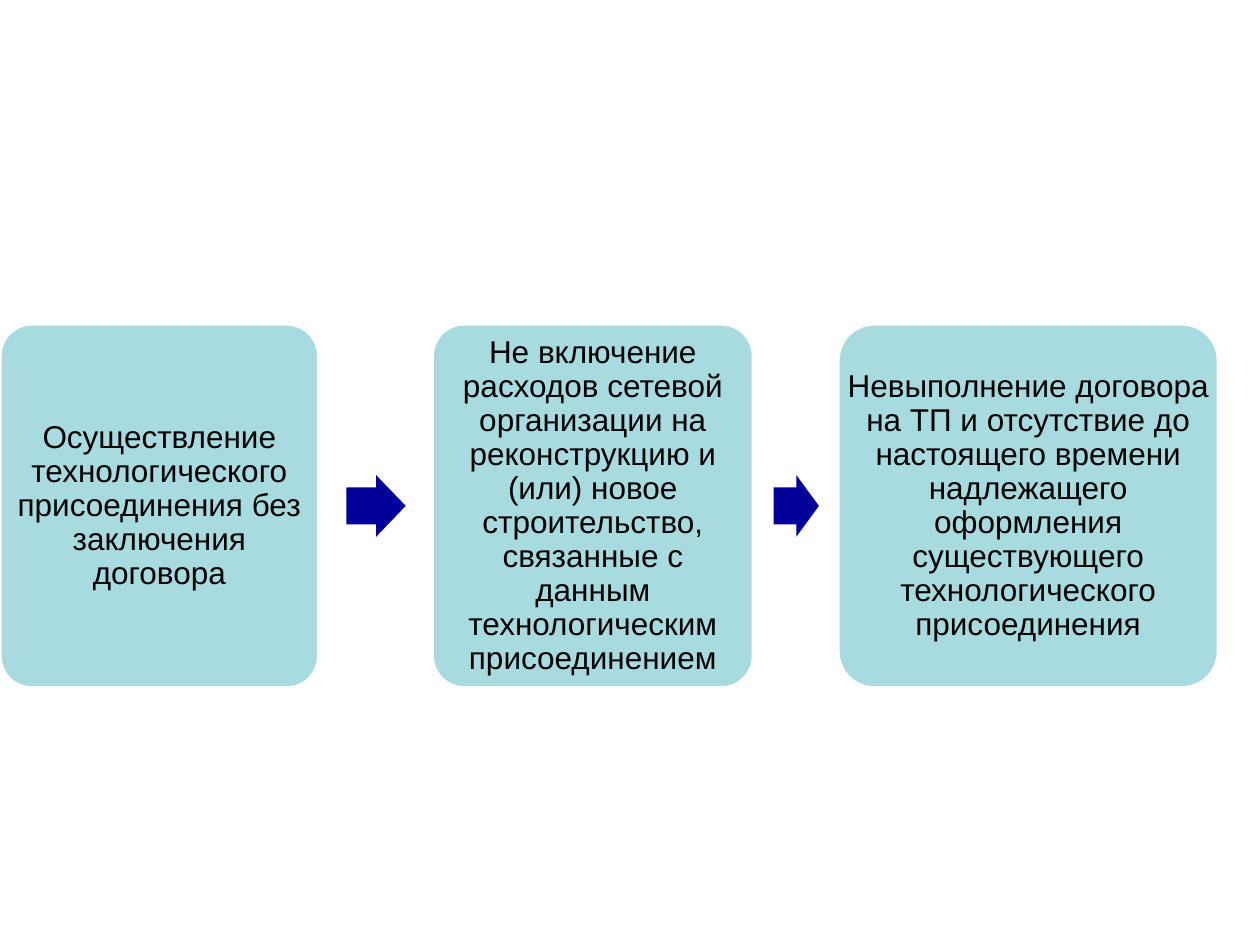
import pptx
import pptx.dml.color
import pptx.enum.shapes
import pptx.enum.text
import pptx.util

Inches = pptx.util.Inches
Shapes = pptx.enum.shapes.MSO_SHAPE


def color(value):
    return pptx.dml.color.RGBColor.from_string(value)


class ProcessSlide:
    font = "Arial"
    size = pptx.util.Pt(18)
    text_color = "000000"
    card_color = "A8DBE0"
    border_color = "FFFFFF"
    arrow_color = "000099"
    card_top, card_height = 2.57, 2.89
    arrow_height = 0.49
    inset = Inches(0.07)

    def __init__(self, page):
        self.page = page

    def shape(self, kind, left, top, width, height, fill):
        shape = self.page.shapes.add_shape(
            kind, Inches(left), Inches(top), Inches(width), Inches(height))
        shape.shadow.inherit = False
        shape.fill.solid()
        shape.fill.fore_color.rgb = color(fill)
        return shape

    def card(self, left, width, text):
        card = self.shape(Shapes.ROUNDED_RECTANGLE, left, self.card_top,
                          width, self.card_height, self.card_color)
        card.adjustments[0] = 0.1
        card.line.color.rgb = color(self.border_color)
        card.line.width = pptx.util.Pt(2)
        self.label(card, text)

    def label(self, card, text):
        box = self.page.shapes.add_textbox(card.left, card.top, card.width, card.height)
        frame = box.text_frame
        frame.word_wrap = True
        frame.vertical_anchor = pptx.enum.text.MSO_ANCHOR.MIDDLE
        frame.margin_left = frame.margin_right = self.inset
        frame.margin_top = frame.margin_bottom = self.inset
        frame.text = text
        para = frame.paragraphs[0]
        para.alignment = pptx.enum.text.PP_ALIGN.CENTER
        para.line_spacing = 0.9
        span = para.runs[0]
        span.font.name = self.font
        span.font.size = self.size
        span.font.color.rgb = color(self.text_color)

    def arrow(self, left, width):
        top = self.card_top + (self.card_height - self.arrow_height) / 2
        arrow = self.shape(Shapes.RIGHT_ARROW, left, top, width,
                           self.arrow_height, self.arrow_color)
        arrow.adjustments[0] = 0.6
        arrow.adjustments[1] = 0.5
        arrow.line.fill.background()


def main():
    deck = pptx.Presentation()
    deck.slide_width = Inches(10)
    deck.slide_height = Inches(7.5)
    slide = ProcessSlide(deck.slides.add_slide(deck.slide_layouts[6]))

    slide.card(0, 2.53, "Осуществление технологического присоединения без заключения договора")
    slide.arrow(2.75, 0.47)
    slide.card(3.43, 2.55, "Не включение расходов сетевой организации на реконструкцию и (или) "
                           "новое строительство, связанные с данным технологическим присоединением")
    slide.arrow(6.14, 0.36)
    slide.card(6.65, 3.02, "Невыполнение договора на ТП и отсутствие до настоящего времени "
                           "надлежащего оформления существующего технологического присоединения")

    deck.save("out.pptx")


if __name__ == "__main__":
    main()
